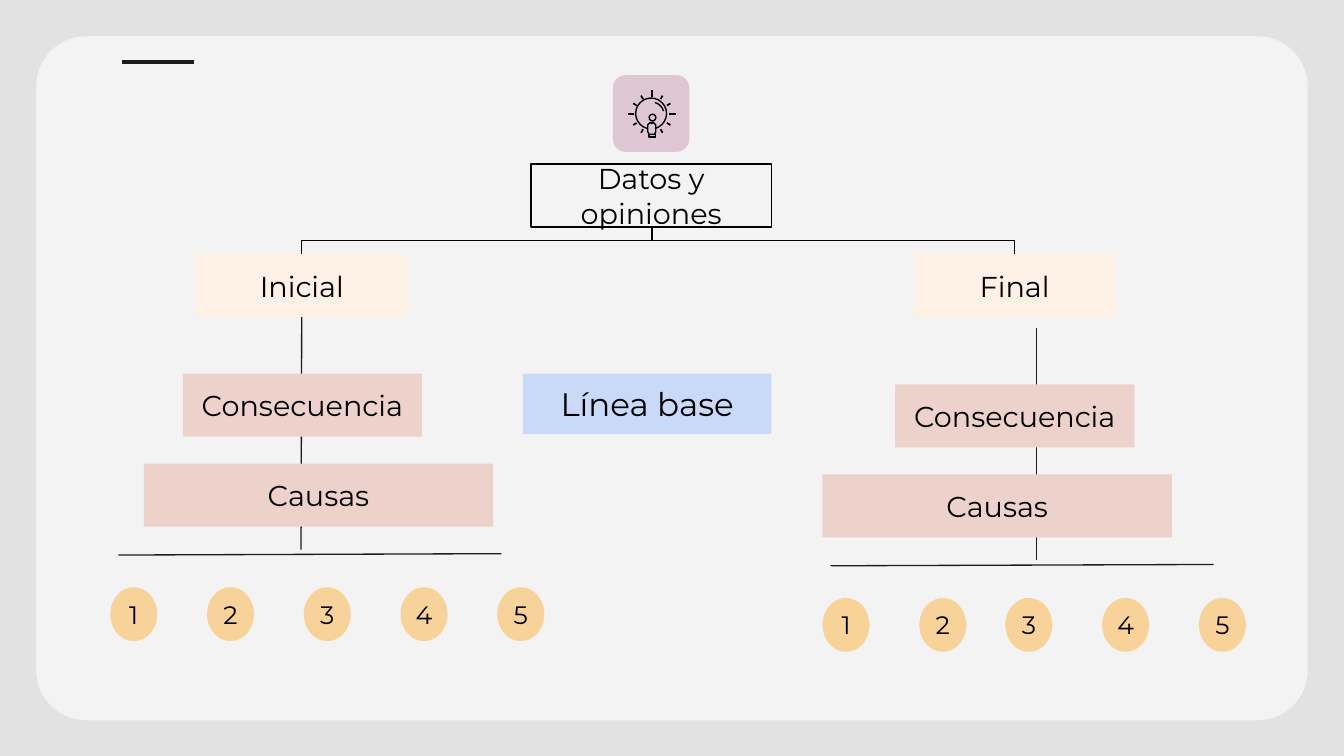
import math

import pptx
import pptx.dml.color
import pptx.enum.shapes
import pptx.enum.text
import pptx.oxml
import pptx.util
from pptx.util import Inches

SHAPE = pptx.enum.shapes.MSO_SHAPE
CONNECTOR = pptx.enum.shapes.MSO_CONNECTOR
color = pptx.dml.color.RGBColor.from_string
BLACK, INK = "000000", "1C1C1C"
PAPER, FRAME, TILE = "F3F3F3", "E2E2E2", "DFC6D3"
CREAM, ROSE, BLUE, AMBER = "FDF0E4", "ECD2CB", "C9DAF8", "F7D299"


def style(shape, fill=None, line=None, width=0.75, text="", size=15.4, inset=0.1):
    """Set the fill, outline and centred label of a shape, and return it."""
    shape.shadow.inherit = False
    if fill:
        shape.fill.solid()
        shape.fill.fore_color.rgb = color(fill)
    else:
        shape.fill.background()
    if line:
        shape.line.color.rgb = color(line)
        shape.line.width = pptx.util.Pt(width)
    else:
        shape.line.fill.background()
    if text:
        frame = shape.text_frame
        frame.word_wrap = True
        frame.vertical_anchor = pptx.enum.text.MSO_ANCHOR.MIDDLE
        frame.margin_left = frame.margin_right = Inches(inset)
        frame.margin_top = frame.margin_bottom = Inches(inset)
        paragraph = frame.paragraphs[0]
        paragraph.alignment = pptx.enum.text.PP_ALIGN.CENTER
        run = paragraph.add_run()
        run.text = text
        run.font.name = "Montserrat"
        run.font.size = pptx.util.Pt(size)
        run.font.color.rgb = color(BLACK)
    return shape


def add_line(shapes, x1, y1, x2, y2, line=INK, width=0.72, kind=CONNECTOR.STRAIGHT):
    connector = shapes.add_connector(kind, Inches(x1), Inches(y1), Inches(x2), Inches(y2))
    connector.line.color.rgb = color(line)
    connector.line.width = pptx.util.Pt(width)
    connector._element.spPr.append(pptx.oxml.parse_xml(
        '<a:effectLst xmlns:a="http://schemas.openxmlformats.org/drawingml/2006/main"/>'))
    return connector


presentation = pptx.Presentation()
presentation.slide_width = Inches(10)
presentation.slide_height = Inches(10) * 9 // 16
slide = presentation.slides.add_slide(presentation.slide_layouts[6])
shapes = slide.shapes
slide.background.fill.solid()
slide.background.fill.fore_color.rgb = color(PAPER)

# Grey frame with a rounded opening
radius = 0.37
opening = []
for center_x, center_y, start in [(9.36, 4.99, 0), (9.36, 0.64, -90),
                                  (0.64, 0.64, -180), (0.64, 4.99, -270)]:
    for step in range(0, 91, 5):
        angle = math.radians(start + 90 - step)
        opening.append((Inches(center_x + radius * math.cos(angle)),
                        Inches(center_y + radius * math.sin(angle))))
width, height = presentation.slide_width, presentation.slide_height
builder = shapes.build_freeform(0, 0)
builder.add_line_segments([(width, 0), (width, height), (0, height)])
builder.move_to(*opening[0])
builder.add_line_segments(opening[1:])
style(builder.convert_to_shape(), FRAME)
add_line(shapes, 0.91, 0.46, 1.44, 0.46, width=2.25)

# Top of the tree
root = style(shapes.add_shape(SHAPE.RECTANGLE, Inches(3.95), Inches(1.22), Inches(1.79), Inches(0.47)),
             line=BLACK, text="Datos y opiniones")
root_x, root_bottom, branch_top = 4.85, 1.69, 1.89
branches = []
for label, left, width, turn, flip in [("Inicial", 1.45, 1.59, 90, False),
                                       ("Final", 6.8, 1.5, 270, True)]:
    branch = style(shapes.add_shape(SHAPE.RECTANGLE, Inches(left), Inches(branch_top),
                                    Inches(width), Inches(0.47)), CREAM, text=label)
    branches.append(branch)
    branch_x = left + width / 2
    elbow = add_line(shapes, root_x, root_bottom, branch_x, branch_top, BLACK, kind=CONNECTOR.ELBOW)
    elbow.begin_connect(root, 2)
    elbow.end_connect(branch, 0)
    # A quarter turn makes the elbow leave the root downwards
    drop, span = branch_top - root_bottom, abs(branch_x - root_x)
    elbow.left = Inches((root_x + branch_x - drop) / 2)
    elbow.top = Inches((root_bottom + branch_top - span) / 2)
    elbow.width, elbow.height = Inches(drop), Inches(span)
    transform = elbow._element.spPr.xfrm
    transform.set("rot", str(turn * 60000))
    transform.set("flipH", str(int(flip)))

# Light bulb icon
style(shapes.add_shape(SHAPE.ROUNDED_RECTANGLE, Inches(4.56), Inches(0.56),
                       Inches(0.57), Inches(0.57)), TILE)
icon = shapes.add_group_shape().shapes
bulb_x, bulb_y = 4.85, 0.85
style(icon.add_shape(SHAPE.OVAL, Inches(4.73), Inches(0.73), Inches(0.23), Inches(0.23)),
      line=BLACK)
glint = style(icon.add_shape(SHAPE.ARC, Inches(4.76), Inches(0.76), Inches(0.18), Inches(0.18)),
              line=BLACK)
glint.adjustments[0], glint.adjustments[1] = 171, 207
body = [(4.82, 0.93), (4.84, 0.91), (4.85, 0.92), (4.86, 0.91), (4.88, 0.93),
        (4.88, 0.98), (4.87, 1), (4.83, 1), (4.82, 0.98)]
points = [(Inches(x), Inches(y)) for x, y in body]
builder = icon.build_freeform(*points[0])
builder.add_line_segments(points[1:])
style(builder.convert_to_shape(), TILE, BLACK)
style(icon.add_shape(SHAPE.OVAL, Inches(4.83), Inches(0.85), Inches(0.05), Inches(0.05)),
      TILE, BLACK)
style(icon.add_shape(SHAPE.RECTANGLE, Inches(4.83), Inches(1), Inches(0.05), Inches(0.02)),
      TILE, BLACK)
# Rays all round, except straight down
for degrees in range(-240, 61, 30):
    cosine, sine = math.cos(math.radians(degrees)), math.sin(math.radians(degrees))
    outer = 0.18 if degrees % 90 == 0 else 0.16
    add_line(icon, bulb_x + 0.13 * cosine, bulb_y + 0.13 * sine,
             bulb_x + outer * cosine, bulb_y + outer * sine, BLACK, 0.9)

style(shapes.add_shape(SHAPE.RECTANGLE, Inches(3.89), Inches(2.78), Inches(1.85), Inches(0.45)),
      BLUE, text="Línea base", size=17.4)

# Both columns: trunk, consequence, causes, rule and numbered circles
columns = [
    (2.24, 2.36, 1.36, 1.07, 0.88, [0.82, 1.54, 2.26, 2.98, 3.7]),
    (7.71, 2.44, 6.66, 6.12, 6.18, [6.12, 6.84, 7.48, 8.2, 8.92]),
]
for trunk_x, top, consequence_left, causes_left, rule_left, circle_lefts in columns:
    trunk = add_line(shapes, trunk_x, top, trunk_x, top + 1.73)
    if trunk_x == 2.24:
        trunk.begin_connect(branches[0], 2)
    for label, left, offset, width in [("Consecuencia", consequence_left, 0.42, 1.78),
                                       ("Causas", causes_left, 1.09, 2.6)]:
        style(shapes.add_shape(SHAPE.RECTANGLE, Inches(left), Inches(top + offset),
                               Inches(width), Inches(0.47)), ROSE, text=label)
    add_line(shapes, rule_left, top + 1.77, rule_left + 2.85, top + 1.76)
    for number, left in enumerate(circle_lefts, 1):
        style(shapes.add_shape(SHAPE.OVAL, Inches(left), Inches(top + 2.01), Inches(0.35), Inches(0.4)),
              AMBER, text=str(number), size=13.5, inset=0)

presentation.save("out.pptx")
